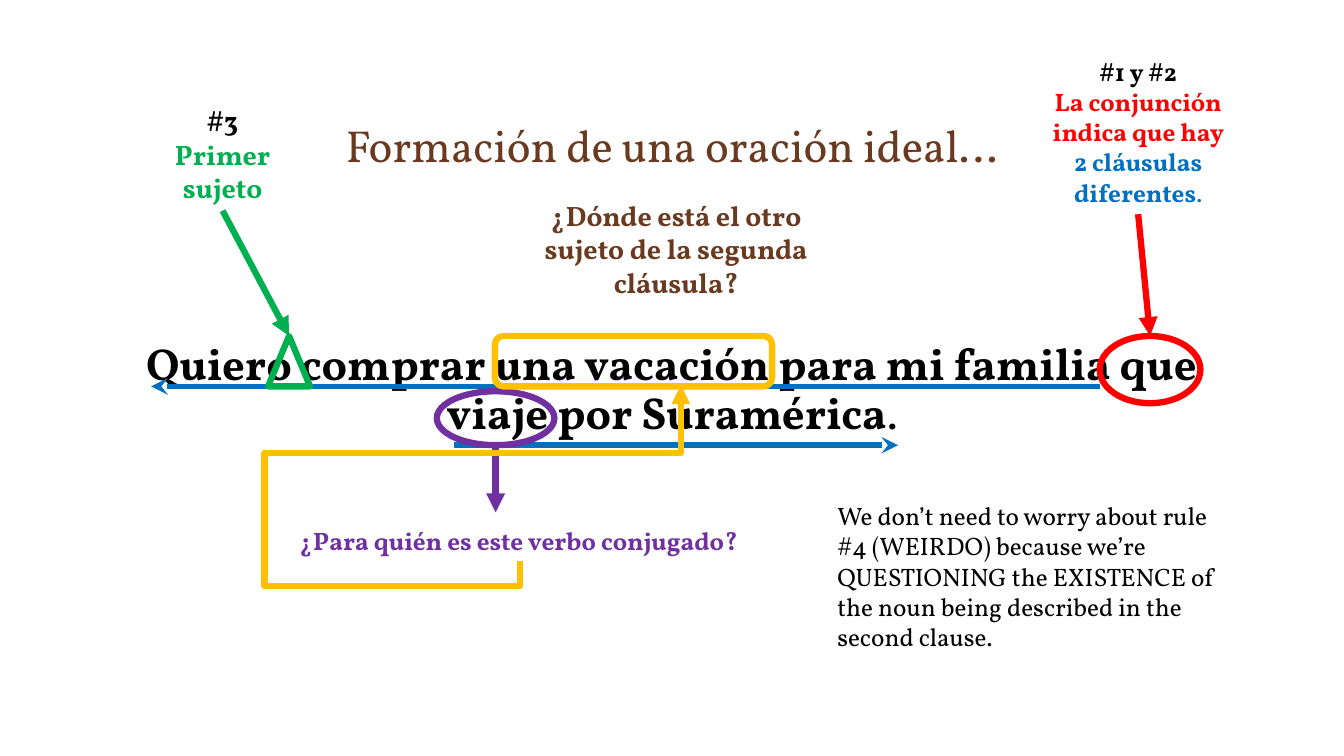
from pptx import Presentation
from pptx.dml.color import RGBColor
from pptx.enum.shapes import MSO_CONNECTOR as LINE, MSO_SHAPE as SHAPE
from pptx.enum.text import MSO_ANCHOR as ANCHOR, MSO_AUTO_SIZE as FIT, PP_ALIGN as ALIGN
from pptx.oxml.ns import qn
from pptx.util import Pt
from lxml.etree import SubElement

FONT = "Vollkorn"
BLACK = RGBColor(0, 0, 0)
BROWN = RGBColor(0x6A, 0x3A, 0x20)
RED = RGBColor(0xFF, 0, 0)
BLUE = RGBColor(0, 0x70, 0xC0)
GREEN = RGBColor(0, 0xB0, 0x50)
PURPLE = RGBColor(0x70, 0x30, 0xA0)
GOLD = RGBColor(0xFF, 0xC0, 0)


def place(sp, box):
    sp.left, sp.top, sp.width, sp.height = (Pt(v) for v in box)


def write(tf, paragraphs, size=18, bold=True, align=ALIGN.CENTER):
    """Each paragraph is a list of (text, colour) or (text, colour, bold) runs."""
    for i, runs in enumerate(paragraphs):
        p = tf.paragraphs[0] if i == 0 else tf.add_paragraph()
        p.alignment = align
        for text, color, *weight in runs:
            r = p.add_run()
            r.text = text
            r.font.name, r.font.size = FONT, Pt(size)
            r.font.bold = weight[0] if weight else bold
            r.font.color.rgb = color


def add_text(slide, box, paragraphs, **fmt):
    sp = slide.shapes.add_textbox(*(Pt(v) for v in box))
    tf = sp.text_frame
    tf.word_wrap = True
    tf.auto_size = FIT.SHAPE_TO_FIT_TEXT
    write(tf, paragraphs, **fmt)
    return sp


def add_mark(slide, kind, box, color):
    sp = slide.shapes.add_shape(kind, *(Pt(v) for v in box))
    sp.shadow.inherit = False
    sp.fill.background()
    sp.line.color.rgb, sp.line.width = color, Pt(4.5)
    return sp


def add_arrow(slide, start, end, color, width=4.5, head="triangle", kind=LINE.STRAIGHT):
    cn = slide.shapes.add_connector(kind, *(Pt(v) for v in (*start, *end)))
    cn.line.color.rgb, cn.line.width = color, Pt(width)
    SubElement(cn.line._get_or_add_ln(), qn("a:tailEnd"), type=head)
    SubElement(cn._element.spPr, qn("a:effectLst"))
    return cn


def title_region(slide, box):
    title = slide.shapes.title
    place(title, box)
    tf = title.text_frame
    tf.vertical_anchor, tf.auto_size = ANCHOR.BOTTOM, FIT.NONE
    write(tf, [[("Formación de una oración ideal…", BROWN)]], size=32, bold=False)


def sentence_region(slide, box):
    """Sentence with its underlined clauses; returns the marks other parts point at."""
    x, y, w, h = box
    body = slide.placeholders[1]
    place(body, box)
    tf = body.text_frame
    tf.vertical_anchor, tf.auto_size = ANCHOR.MIDDLE, FIT.NONE
    p = tf.paragraphs[0]
    pPr = p._p.get_or_add_pPr()
    pPr.set("marL", "0")
    pPr.set("indent", "0")
    SubElement(pPr, qn("a:buNone"))
    p.line_spacing, p.space_before = 0.9, Pt(0)
    write(tf, [[("Quiero comprar una vacación para mi familia que viaje por Suramérica", BLACK),
                (".", BLACK, False)]], size=32)

    # Clause underlines
    for start, end, down in ((689.5, 12, 36), (228, 545.5, 78)):
        add_arrow(slide, (x + start, y + down), (x + end, y + down), BLUE, 4, "stealth")

    # Marks around the key words
    conjunction = add_mark(slide, SHAPE.OVAL, (x + 689.5, y, 72, 48), RED)
    subject = add_mark(slide, SHAPE.ISOSCELES_TRIANGLE, (x + 95.5, y, 30, 36), GREEN)
    add_mark(slide, SHAPE.OVAL, (x + 216, y + 39.5, 84, 38.5), PURPLE)
    add_mark(slide, SHAPE.ROUNDED_RECTANGLE, (x + 257.5, y, 198, 36), GOLD)
    return subject, conjunction


def callout(slide, box, paragraphs, color, target, size):
    """Note whose arrow runs from its lower edge to the top of a mark."""
    note = add_text(slide, box, paragraphs, size=size)
    x, y, w, h = box
    cn = add_arrow(slide, (x + w / 2, y + h), (x + w / 2, y + h + 80), color)
    cn.begin_connect(note, 2)
    cn.end_connect(target, 0)


def verb_region(slide, box):
    """Question on the verb, the arrow down to it and the loop back to the noun."""
    x, y, w, h = box
    add_text(slide, box, [[("¿Para quién es este verbo conjugado?", PURPLE)]],
             align=ALIGN.LEFT)
    add_arrow(slide, (x + 147, y - 54), (x + 147, y - 6), PURPLE)

    # The loop lies in a box turned by 90 degrees
    loop = add_arrow(slide, (x + 284.5, y + 23.5), (x + 159, y - 91.5), GOLD, kind=LINE.ELBOW)
    spPr = loop._element.spPr
    spPr.find(qn("a:xfrm")).set("rot", str(90 * 60000))
    geom = spPr.find(qn("a:prstGeom"))
    geom.set("prst", "bentConnector5")
    guides = geom.find(qn("a:avLst"))
    if guides is None:
        guides = SubElement(geom, qn("a:avLst"))
    for i, value in enumerate((-14400, -158500, 61600), 1):
        SubElement(guides, qn("a:gd"), name=f"adj{i}", fmla=f"val {value}")


def main():
    prs = Presentation()
    prs.slide_width, prs.slide_height = Pt(960), Pt(540)
    slide = prs.slides.add_slide(prs.slide_layouts[1])

    title_region(slide, (96, 34, 768, 92))
    subject, conjunction = sentence_region(slide, (96, 240, 768, 78))

    # Rule notes
    callout(slide, (741, 36.5, 144, 116.5),
            [[("#1 y #2", BLACK)],
             [("La conjunción indica que hay ", RED), ("2 cláusulas diferentes", BLUE),
              (".", BLUE, False)]],
            RED, conjunction, 18)
    callout(slide, (96, 70.5, 126, 80),
            [[("#3", BLACK)], [("Primer sujeto", GREEN)]], GREEN, subject, 20)

    # Questions and closing remark
    add_text(slide, (375, 138, 216, 80),
             [[("¿Dónde está el otro sujeto de la segunda cláusula?", BROWN)]], size=20)
    verb_region(slide, (207, 372, 345, 29))
    add_text(slide, (591, 354, 297, 116.5),
             [[("We don’t need to worry about rule #4 (WEIRDO) because we’re QUESTIONING "
                "the EXISTENCE of the noun being described in the second clause.", BLACK)]],
             bold=False, align=ALIGN.LEFT)

    prs.save("out.pptx")


if __name__ == "__main__":
    main()
